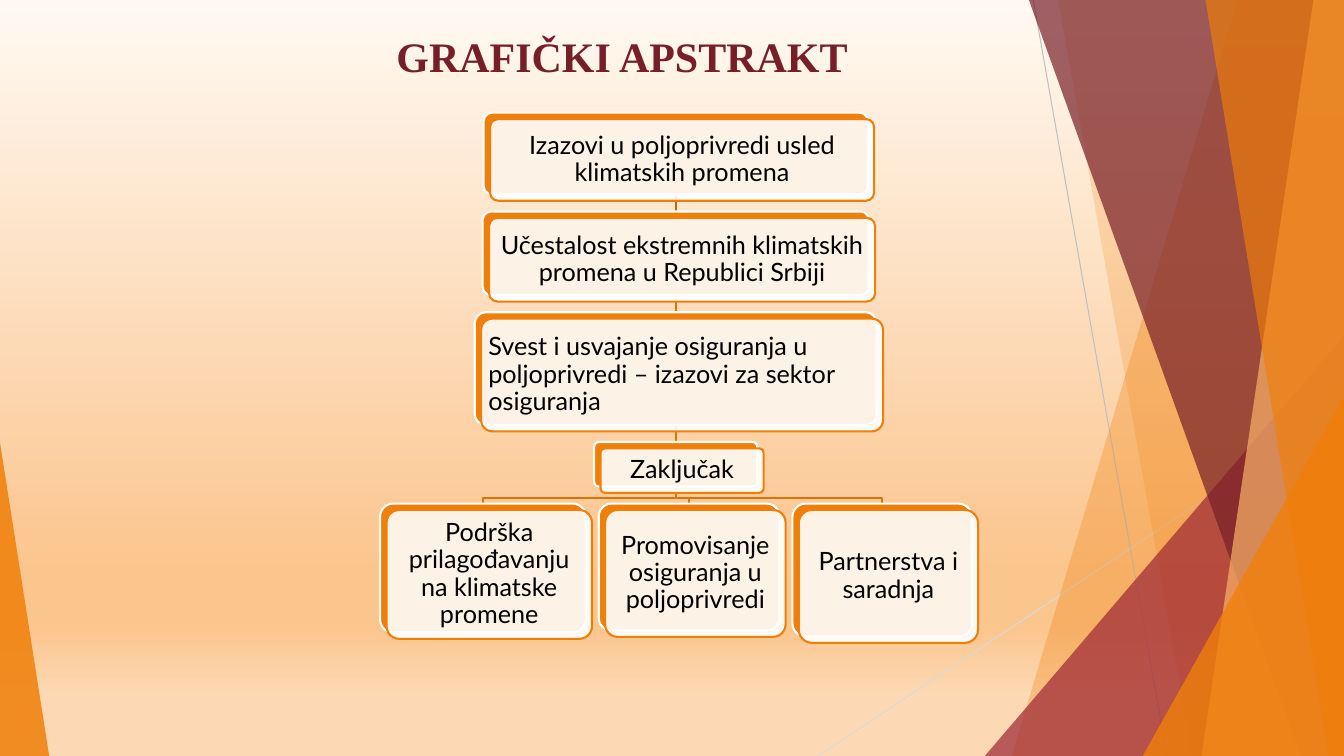
from lxml.etree import SubElement
from pptx import Presentation
from pptx.dml.color import RGBColor
from pptx.enum.shapes import MSO_CONNECTOR, MSO_SHAPE
from pptx.enum.text import MSO_ANCHOR, PP_ALIGN
from pptx.oxml.ns import qn
from pptx.util import Cm, Pt

WIDTH, HEIGHT = 33.87, 19.05
COLORS = {
    "orange": "F07F09", "peach": "F9B268", "berry": "9F2936", "wine": "771F28",
    "link": "DA7308", "first link": "C06607", "white": "FFFFFF", "black": "000000",
    "gray": "BFBFBF", "pale gray": "D9D9D9",
}
BACKGROUND = [(0, "FFF9F2"), (76, "FBC58E"), (83, "FBC58E"), (92, "FCD9B4")]

TITLE = "GRAFIČKI APSTRAKT"
STEPS = [
    ("Izazovi u poljoprivredi usled klimatskih promena", 9.68, 2.06, PP_ALIGN.CENTER),
    ("Učestalost ekstremnih klimatskih promena u Republici Srbiji", 9.73, 2.11, PP_ALIGN.CENTER),
    ("Svest i usvajanje osiguranja u poljoprivredi – izazovi za sektor osiguranja",
     10.13, 2.84, PP_ALIGN.LEFT),
    ("Zaključak", 4.11, 1.12, PP_ALIGN.CENTER),
]
CONCLUSIONS = [
    ("Podrška prilagođavanju na klimatske promene", 5.18, 3.25),
    ("Promovisanje osiguranja u poljoprivredi", 4.55, 3.2),
    ("Partnerstva i saradnja", 4.52, 3.35),
]
AXIS, STEPS_TOP, STEP_GAP = 17.03, 2.84, 0.43
CONCLUSIONS_LEFT, CONCLUSION_GAP = 9.58, 0.33
CARD_OFFSET, ELBOW_DROP = 0.16, 0.28

RAYS = [(26.04, 0, 29.41, HEIGHT, "gray"), (WIDTH, 10.24, 20.62, HEIGHT, "pale gray")]
DECOR = [
    ("band", (31.19, 25.5), "orange", 30),
    ("band", (26.67, 30.05), "orange", 20),
    ("wedge", (24.82, 9.05, 10.59, 1), "berry", 72),
    ("band", (25.93, 32.79), "wine", 70),
    ("band", (33.1, 30.28), "peach", 70),
    ("band", (30.38, 33.48), "orange", 65),
    ("wedge", (28.8, 5.07, 9.07, 1), "orange", 80),
    ("wedge", (0, 1.24, 7.9, 0), "orange", 85),
]


def color(name):
    return RGBColor.from_string(COLORS[name])


def paint(shape, fill, opacity=100, line=None):
    shape.shadow.inherit = False
    shape.fill.solid()
    shape.fill.fore_color.rgb = color(fill)
    if opacity < 100:
        tone = shape.fill._xPr.find(qn("a:solidFill"))[0]
        SubElement(tone, qn("a:alpha"), val=str(opacity * 1000))
    if line:
        shape.line.color.rgb = color(line)
        shape.line.width = Pt(1.5)
    else:
        shape.line.fill.background()


def add_outline(page, points, close):
    corners = [(Cm(x), Cm(y)) for x, y in points]
    builder = page.shapes.build_freeform(*corners[0])
    builder.add_line_segments(corners[1:], close=close)
    return builder.convert_to_shape()


def add_line(page, ends, name, width):
    line = page.shapes.add_connector(MSO_CONNECTOR.STRAIGHT, *[Cm(end) for end in ends])
    line.line.color.rgb = color(name)
    line.line.width = Pt(width)
    SubElement(line._element.spPr, qn("a:effectLst"))
    return line


def add_elbow(page, child_x, top, bottom):
    bend = top + ELBOW_DROP
    points = [(AXIS, top), (AXIS, bend), (child_x, bend), (child_x, bottom)]
    elbow = add_outline(page, points, False)
    elbow.shadow.inherit = False
    elbow.fill.background()
    elbow.line.color.rgb = color("link")
    elbow.line.width = Pt(1.5)


def add_card(page, text, left, top, width, height, align):
    layers = []
    for offset in (0, CARD_OFFSET):
        box = page.shapes.add_shape(MSO_SHAPE.ROUNDED_RECTANGLE, Cm(left + offset),
                                    Cm(top + offset), Cm(width), Cm(height))
        box.adjustments[0] = 0.1
        layers.append(box)
    back, front = layers
    paint(back, "orange", line="white")
    paint(front, "white", 90, "orange")
    frame = front.text_frame
    frame.word_wrap = True
    frame.vertical_anchor = MSO_ANCHOR.MIDDLE
    frame.margin_left = frame.margin_right = Cm(0.1)
    frame.margin_top = frame.margin_bottom = Cm(0.1)
    frame.text = text
    para = frame.paragraphs[0]
    para.alignment = align
    para.line_spacing = 0.9
    font = para.runs[0].font
    font.name, font.size = "Lato", Pt(18)
    font.color.rgb = color("black")
    return back


def add_background(page):
    fill = page.background.fill
    fill.gradient()
    fill.gradient_angle = 270
    stops = page._element.find(".//" + qn("a:gsLst"))
    for stop in list(stops):
        stops.remove(stop)
    for position, tone in BACKGROUND:
        stop = SubElement(stops, qn("a:gs"), pos=str(position * 1000))
        SubElement(stop, qn("a:srgbClr"), val=tone)


def add_decor(page):
    for *ends, name in RAYS:
        add_line(page, ends, name, 0.75)
    for kind, geometry, name, opacity in DECOR:
        if kind == "band":
            top_x, bottom_x = geometry
            points = [(top_x, 0), (WIDTH, 0), (WIDTH, HEIGHT), (bottom_x, HEIGHT)]
            shape = add_outline(page, points, True)
        else:
            left, width, height, apex = geometry
            shape = page.shapes.add_shape(MSO_SHAPE.ISOSCELES_TRIANGLE, Cm(left),
                                          Cm(HEIGHT - height), Cm(width), Cm(height))
            shape.adjustments[0] = apex
        paint(shape, name, opacity)


def add_title(page):
    title = page.shapes.title
    title.left, title.top, title.width, title.height = Cm(1.47), Cm(0.64), Cm(28.42), Cm(2.21)
    frame = title.text_frame
    frame.text = TITLE
    frame.vertical_anchor = MSO_ANCHOR.TOP
    para = frame.paragraphs[0]
    para.alignment = PP_ALIGN.CENTER
    font = para.runs[0].font
    font.name, font.size, font.bold = "Times New Roman", Pt(30), True
    font.color.rgb = color("wine")


def add_diagram(page):
    cards = []
    top = STEPS_TOP
    for text, width, height, align in STEPS:
        cards.append((text, AXIS - width / 2, top, width, height, align))
        top += height + STEP_GAP
    left = CONCLUSIONS_LEFT
    for text, width, height in CONCLUSIONS:
        cards.append((text, left, top, width, height, PP_ALIGN.CENTER))
        add_elbow(page, left + width / 2, top - STEP_GAP, top)
        left += width + CONCLUSION_GAP

    links = [add_line(page, (AXIS, 0, AXIS, 1), "link" if index else "first link", 1.5)
             for index in range(len(STEPS) - 1)]
    backs = [add_card(page, *card) for card in cards]
    for link, parent, child in zip(links, backs, backs[1:]):
        link.begin_connect(parent, 2)
        link.end_connect(child, 0)


def main():
    deck = Presentation()
    deck.slide_width, deck.slide_height = Cm(WIDTH), Cm(HEIGHT)
    page = deck.slides.add_slide(deck.slide_layouts[5])
    add_background(page)
    add_decor(page)
    add_title(page)
    add_diagram(page)
    deck.save("out.pptx")


if __name__ == "__main__":
    main()
